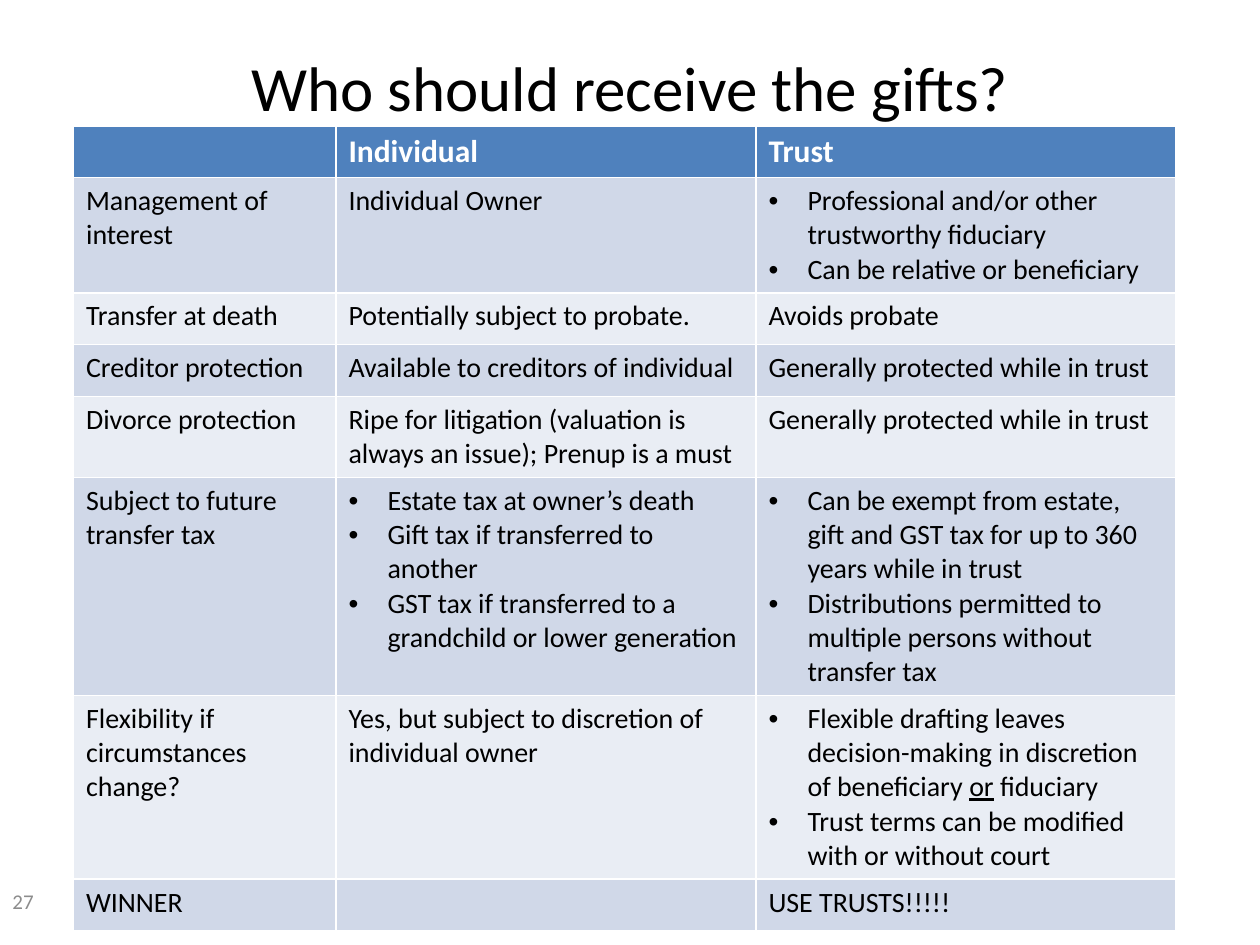
from dataclasses import dataclass

from lxml import etree
from pptx import Presentation
from pptx.dml.color import RGBColor
from pptx.enum.text import MSO_ANCHOR, PP_ALIGN
from pptx.oxml.ns import qn
from pptx.util import Inches, Pt

MIDDLE, CENTER = MSO_ANCHOR.MIDDLE, PP_ALIGN.CENTER
TITLE_ONLY = 5
COLS, ROWS = 120, 90  # grid of the slide


@dataclass(frozen=True)
class Theme:
    font: str = "Calibri"
    ink: str = "000000"
    header_ink: str = "FFFFFF"
    muted: str = "8C8C8C"
    header: str = "4F81BD"
    bands: tuple = ("D0D8E8", "E9EDF4")
    title_size: int = 36
    header_size: int = 18
    body_size: int = 16
    number_size: int = 12


# A list in a cell is bulleted; underscores enclose underlined words.
COMPARISON = [
    ("", "Individual", "Trust"),
    ("Management of interest", "Individual Owner",
     ["Professional and/or other trustworthy fiduciary",
      "Can be relative or beneficiary"]),
    ("Transfer at death", "Potentially subject to probate.", "Avoids probate"),
    ("Creditor protection", "Available to creditors of individual",
     "Generally protected while in trust"),
    ("Divorce protection",
     "Ripe for litigation (valuation is always an issue); Prenup is a must",
     "Generally protected while in trust"),
    ("Subject to future transfer tax",
     ["Estate tax at owner’s death",
      "Gift tax if transferred to another",
      "GST tax if transferred to a grandchild or lower generation"],
     ["Can be exempt from estate, gift and GST tax for up to 360 years while in trust",
      "Distributions permitted to multiple persons without transfer tax"]),
    ("Flexibility if circumstances change?",
     "Yes, but subject to discretion of individual owner",
     ["Flexible drafting leaves decision-making in discretion of beneficiary _or_ fiduciary",
      "Trust terms can be modified with or without court"]),
    ("WINNER", "", "USE TRUSTS!!!!!"),
]


class Deck:
    def __init__(self, theme):
        self.theme = theme
        self.prs = Presentation()
        self.prs.slide_width, self.prs.slide_height = Inches(10), Inches(7.5)
        self.s = self.prs.slides.add_slide(self.prs.slide_layouts[TITLE_ONLY])

    def x(self, cols):
        return round(self.prs.slide_width * cols / COLS)

    def y(self, rows):
        return round(self.prs.slide_height * rows / ROWS)

    def box(self, left, top, width, height):
        return self.x(left), self.y(top), self.x(width), self.y(height)

    def style(self, p, size, color, bold=False):
        p.font.name, p.font.size, p.font.bold = self.theme.font, Pt(size), bold
        p.font.color.rgb = RGBColor.from_string(color)

    def bullet(self, p):
        pPr = p._p.get_or_add_pPr()
        pPr.set("marL", str(Inches(0.31)))
        pPr.set("indent", str(-Inches(0.31)))
        font = etree.Element(qn("a:buFont"), typeface="Arial")
        char = etree.Element(qn("a:buChar"), char="•")
        pPr.insert(0, font)
        pPr.insert(1, char)

    def title(self, text, *area):
        sp = self.s.shapes.title
        sp.left, sp.top, sp.width, sp.height = self.box(*area)
        tf = sp.text_frame
        tf.text = text
        tf.vertical_anchor = MIDDLE
        tf.margin_bottom = Inches(0.27)  # lifts the line clear of the table
        p = tf.paragraphs[0]
        p.alignment = CENTER
        self.style(p, self.theme.title_size, self.theme.ink)

    def number(self, text, *area):
        tf = self.s.shapes.add_textbox(*self.box(*area)).text_frame
        tf.word_wrap = True
        tf.vertical_anchor = MIDDLE
        tf.text = text
        self.style(tf.paragraphs[0], self.theme.number_size, self.theme.muted)

    def cell(self, cell, content, fill, size, color, bold):
        cell.fill.solid()
        cell.fill.fore_color.rgb = RGBColor.from_string(fill)
        bulleted = isinstance(content, list)
        tf = cell.text_frame
        for i, text in enumerate(content if bulleted else [content]):
            p = tf.add_paragraph() if i else tf.paragraphs[0]
            self.style(p, size, color, bold)
            if bulleted:
                self.bullet(p)
            for j, part in enumerate(text.split("_")):
                if part:
                    r = p.add_run()
                    r.text = part
                    if j % 2:
                        r.font.underline = True

    def table(self, data, col_shares, row_height, *area):
        """Rows start at row_height and grow with their text."""
        t = self.theme
        sp = self.s.shapes.add_table(len(data), len(data[0]), *self.box(*area))
        height = sp.height
        table = sp.table
        for column, share in zip(table.columns, col_shares):
            column.width = round(self.x(area[2]) * share / sum(col_shares))
        for i, values in enumerate(data):
            table.rows[i].height = Inches(row_height)
            if i == 0:
                look = (t.header, t.header_size, t.header_ink, True)
            else:
                look = (t.bands[(i - 1) % 2], t.body_size, t.ink, False)
            for j, content in enumerate(values):
                self.cell(table.cell(i, j), content, *look)
        sp.height = height


def main():
    deck = Deck(Theme())
    deck.title("Who should receive the gifts?", 6, 2, 108, 15)
    deck.table(COMPARISON, (5, 8, 8), 0.41, 7, 12, 105, 75.5)
    deck.number("27", 0, 83.4, 28, 4.8)
    deck.prs.save("out.pptx")


if __name__ == "__main__":
    main()
